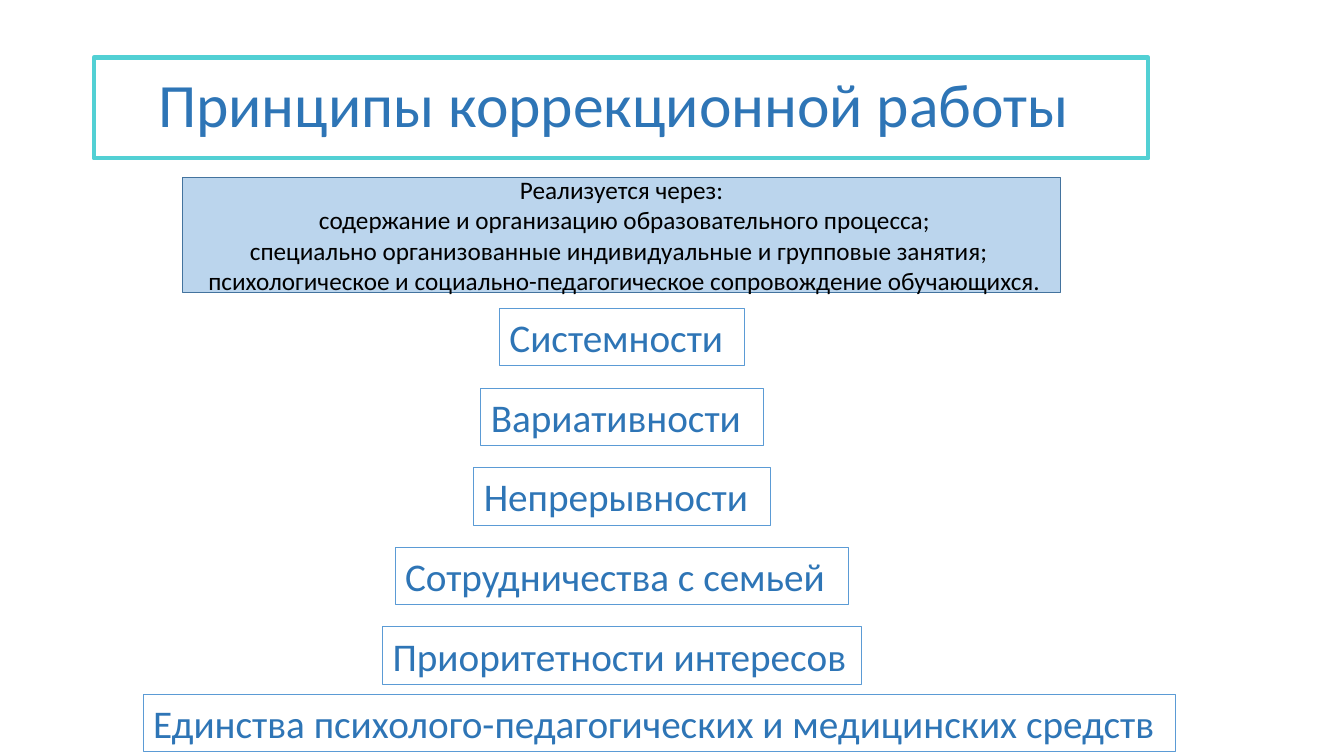
from pptx import Presentation
from pptx.dml.color import RGBColor
from pptx.enum.shapes import MSO_SHAPE
from pptx.enum.text import MSO_ANCHOR, MSO_AUTO_SIZE, PP_ALIGN
from pptx.oxml.ns import qn
from pptx.util import Inches, Pt
from lxml import etree

RECTANGLE = MSO_SHAPE.RECTANGLE
MIDDLE, TOP = MSO_ANCHOR.MIDDLE, MSO_ANCHOR.TOP
CENTER, LEFT = PP_ALIGN.CENTER, PP_ALIGN.LEFT

# Content
TITLE = "Принципы коррекционной работы "
MEANS = [
    "Реализуется через:",
    " содержание и организацию образовательного процесса;",
    "специально организованные индивидуальные и групповые занятия; ",
    " психологическое и социально-педагогическое сопровождение обучающихся.",
]
PRINCIPLES = [  # text, box width
    ("Системности", 2.43),
    ("Вариативности", 2.8),
    ("Непрерывности", 2.94),
    ("Сотрудничества с семьей", 4.5),
    ("Приоритетности интересов", 4.75),
]
UNITY = ("Единства психолого-педагогических и медицинских средств", 10.24)

THEME = {
    "font": "Calibri",
    "white": "FFFFFF", "black": "000000", "text": "2E75B6",
    "title_line": "52D0D4", "box_line": "5B9BD5",
    "means_fill": "5B9BD5", "means_line": "43739E",
    "title_size": 44, "means_size": 18, "principle_size": 28,
}

# Layout, in inches
AXIS = 6.17
UNITY_AXIS = 6.54
FIRST_TOP, STEP, UNITY_TOP, BOX_HEIGHT = 3.06, 0.79, 6.89, 0.57


def color(name):
    return RGBColor.from_string(THEME[name])


def place(shape, left, top, width, height):
    shape.left, shape.top = Inches(left), Inches(top)
    shape.width, shape.height = Inches(width), Inches(height)


def set_outline(shape, line_color, width):
    shape.line.color.rgb = color(line_color)
    shape.line.width = Pt(width)


def write(shape, lines, size, text_color="text", align=LEFT, anchor=TOP, spacing=1.0):
    frame = shape.text_frame
    frame.word_wrap = True
    frame.auto_size = MSO_AUTO_SIZE.NONE
    frame.vertical_anchor = anchor
    for index, line in enumerate(lines):
        paragraph = frame.add_paragraph() if index else frame.paragraphs[0]
        paragraph.alignment = align
        paragraph.line_spacing = spacing
        run = paragraph.add_run()
        run.text = line
        run.font.name = THEME["font"]
        run.font.size = Pt(THEME[size])
        run.font.color.rgb = color(text_color)


def add_box(slide, left, top, width, height):
    shape = slide.shapes.add_shape(
        RECTANGLE, Inches(left), Inches(top), Inches(width), Inches(height))
    shape.shadow.inherit = False
    return shape


def add_principle(slide, text, width, axis, top):
    box = add_box(slide, axis - width / 2, top, width, BOX_HEIGHT)
    box.fill.background()
    set_outline(box, "box_line", 0.75)
    write(box, [text], "principle_size")


def main():
    presentation = Presentation()
    presentation.slide_width, presentation.slide_height = Inches(13.33), Inches(7.5)
    slide = presentation.slides.add_slide(presentation.slide_layouts[5])

    # Title
    title = slide.shapes.title
    place(title, 0.93, 0.57, 10.46, 1)
    title.fill.solid()
    title.fill.fore_color.rgb = color("white")
    set_outline(title, "title_line", 3)
    write(title, [TITLE], "title_size", align=CENTER, anchor=MIDDLE, spacing=0.9)

    # Principles, stacked on a common axis
    for index, (text, width) in enumerate(PRINCIPLES):
        add_principle(slide, text, width, AXIS, FIRST_TOP + index * STEP)
    add_principle(slide, *UNITY, UNITY_AXIS, UNITY_TOP)

    # Translucent panel with the means
    panel = add_box(slide, 1.81, 1.76, 8.71, 1.14)
    panel.fill.solid()
    panel.fill.fore_color.rgb = color("means_fill")
    fill_color = panel.fill._xPr.find(qn("a:solidFill"))[0]
    etree.SubElement(fill_color, qn("a:alpha")).set("val", "41000")
    set_outline(panel, "means_line", 1)
    write(panel, MEANS, "means_size", text_color="black", align=CENTER, anchor=MIDDLE)

    presentation.save("out.pptx")


if __name__ == "__main__":
    main()
